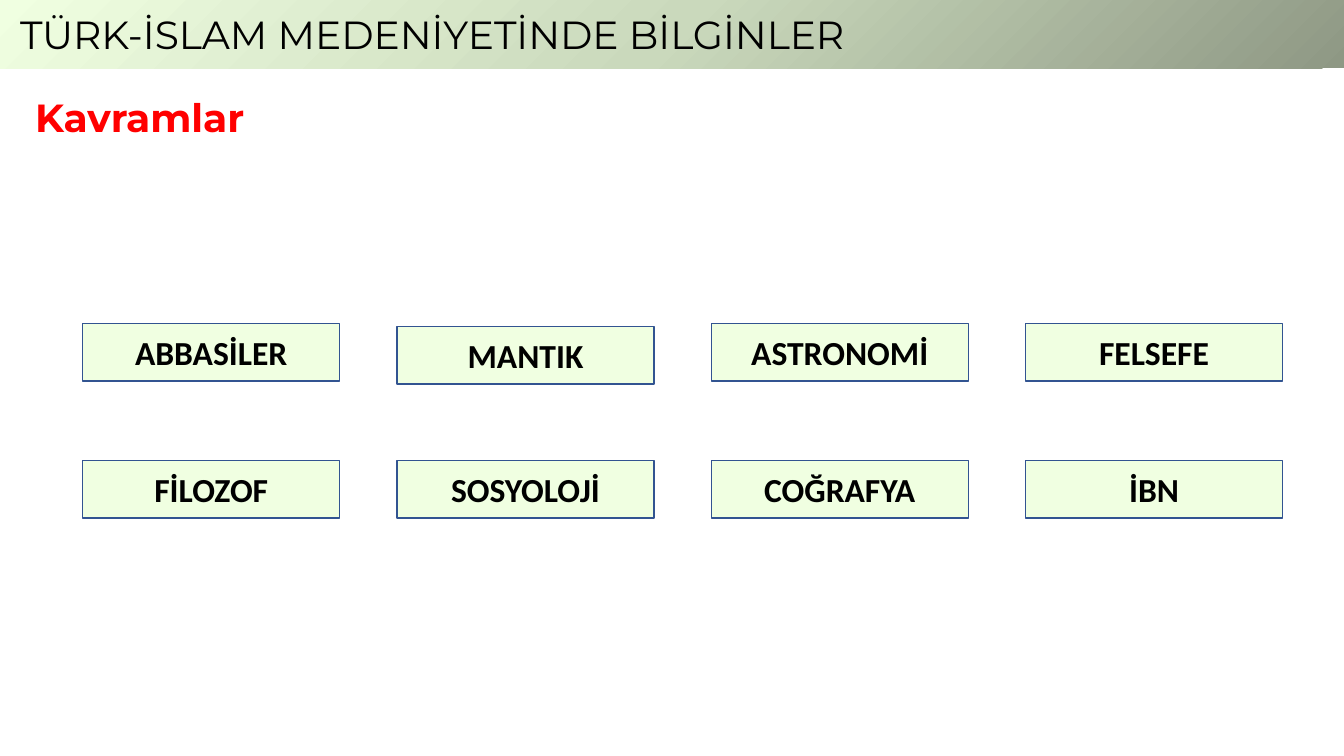
import copy
import dataclasses

import pptx
import pptx.dml.color
import pptx.enum.dml
import pptx.enum.shapes
import pptx.enum.text
import pptx.oxml.ns
import pptx.util

Inches = pptx.util.Inches
Align = pptx.enum.text.PP_ALIGN
Anchor = pptx.enum.text.MSO_ANCHOR


@dataclasses.dataclass(frozen=True)
class Theme:
    ink: str = "000000"
    accent: str = "FF0000"
    card_fill: str = "F0FFE1"
    card_line: str = "325491"
    banner_stops: tuple = ((0, "8E9884"), (0.5, "CAD9BC"), (1, "F0FFE1"))
    heading_font: str = "Montserrat"
    card_font: str = "Calibri"
    heading_size: int = 28
    card_size: int = 24


def rgb(value):
    return pptx.dml.color.RGBColor.from_string(value)


def write(frame, text, *, font, size, color, bold=False,
          align=Align.LEFT, anchor=Anchor.TOP, wrap=True):
    frame.word_wrap = wrap
    frame.vertical_anchor = anchor
    paragraph = frame.paragraphs[0]
    paragraph.alignment = align
    run = paragraph.add_run()
    run.text = text
    run.font.name = font
    run.font.size = pptx.util.Pt(size)
    run.font.bold = bold
    run.font.color.rgb = rgb(color)


class ConceptSlide:
    def __init__(self, slide, theme):
        self.slide = slide
        self.theme = theme

    def rectangle(self, left, top, width, height):
        shape = self.slide.shapes.add_shape(
            pptx.enum.shapes.MSO_SHAPE.RECTANGLE,
            Inches(left), Inches(top), Inches(width), Inches(height))
        shape.shadow.inherit = False
        return shape

    def gradient(self, shape, stops, angle):
        """Fill with any number of stops; the angle runs counter-clockwise."""
        shape.fill.gradient()
        shape.fill.gradient_angle = angle
        stop_list = shape._element.spPr.find(
            ".//" + pptx.oxml.ns.qn("a:gsLst"))
        while len(stop_list) < len(stops):
            stop_list.append(copy.deepcopy(stop_list[0]))
        for stop, (position, color) in zip(shape.fill.gradient_stops, stops):
            stop.position = position
            stop.color.rgb = rgb(color)

    def banner(self, text):
        banner = self.rectangle(0, 0, 13.33, 0.68)
        self.gradient(banner, self.theme.banner_stops, 135)
        banner.line.fill.background()
        banner.text_frame.margin_left = Inches(0.2)
        write(banner.text_frame, text, font=self.theme.heading_font,
              size=self.theme.heading_size, color=self.theme.ink,
              anchor=Anchor.MIDDLE)

    def heading(self, text):
        heading = self.slide.shapes.add_textbox(
            Inches(0.25), Inches(0.88), Inches(2.42), Inches(0.57))
        heading.text_frame.auto_size = (
            pptx.enum.text.MSO_AUTO_SIZE.SHAPE_TO_FIT_TEXT)
        write(heading.text_frame, text, font=self.theme.heading_font,
              size=self.theme.heading_size, color=self.theme.accent,
              bold=True, wrap=False)

    def card(self, text, left, top):
        card = self.rectangle(left, top, 2.55, 0.57)
        card.fill.solid()
        card.fill.fore_color.rgb = rgb(self.theme.card_fill)
        card.line.color.rgb = rgb(self.theme.card_line)
        card.line.width = pptx.util.Pt(1)
        write(card.text_frame, text, font=self.theme.card_font,
              size=self.theme.card_size, color=self.theme.ink, bold=True,
              align=Align.CENTER, anchor=Anchor.MIDDLE)


CONCEPTS = (
    ("ABBASİLER", "MANTIK", "ASTRONOMİ", "FELSEFE"),
    ("FİLOZOF", "SOSYOLOJİ", "COĞRAFYA", "İBN"),
)
GRID_LEFT, GRID_TOP = 0.82, 3.21
COLUMN_STEP, ROW_STEP = 3.117, 1.36
NUDGE_DOWN = {"MANTIK": 0.03}


def main():
    presentation = pptx.Presentation()
    presentation.slide_width = Inches(13.33)
    presentation.slide_height = Inches(7.5)
    page = ConceptSlide(
        presentation.slides.add_slide(presentation.slide_layouts[6]), Theme())

    page.heading("Kavramlar")
    page.banner("TÜRK-İSLAM MEDENİYETİNDE BİLGİNLER")
    for row, concepts in enumerate(CONCEPTS):
        for column, concept in enumerate(concepts):
            page.card(concept,
                      GRID_LEFT + column * COLUMN_STEP,
                      GRID_TOP + row * ROW_STEP + NUDGE_DOWN.get(concept, 0))

    presentation.save("out.pptx")


if __name__ == "__main__":
    main()
